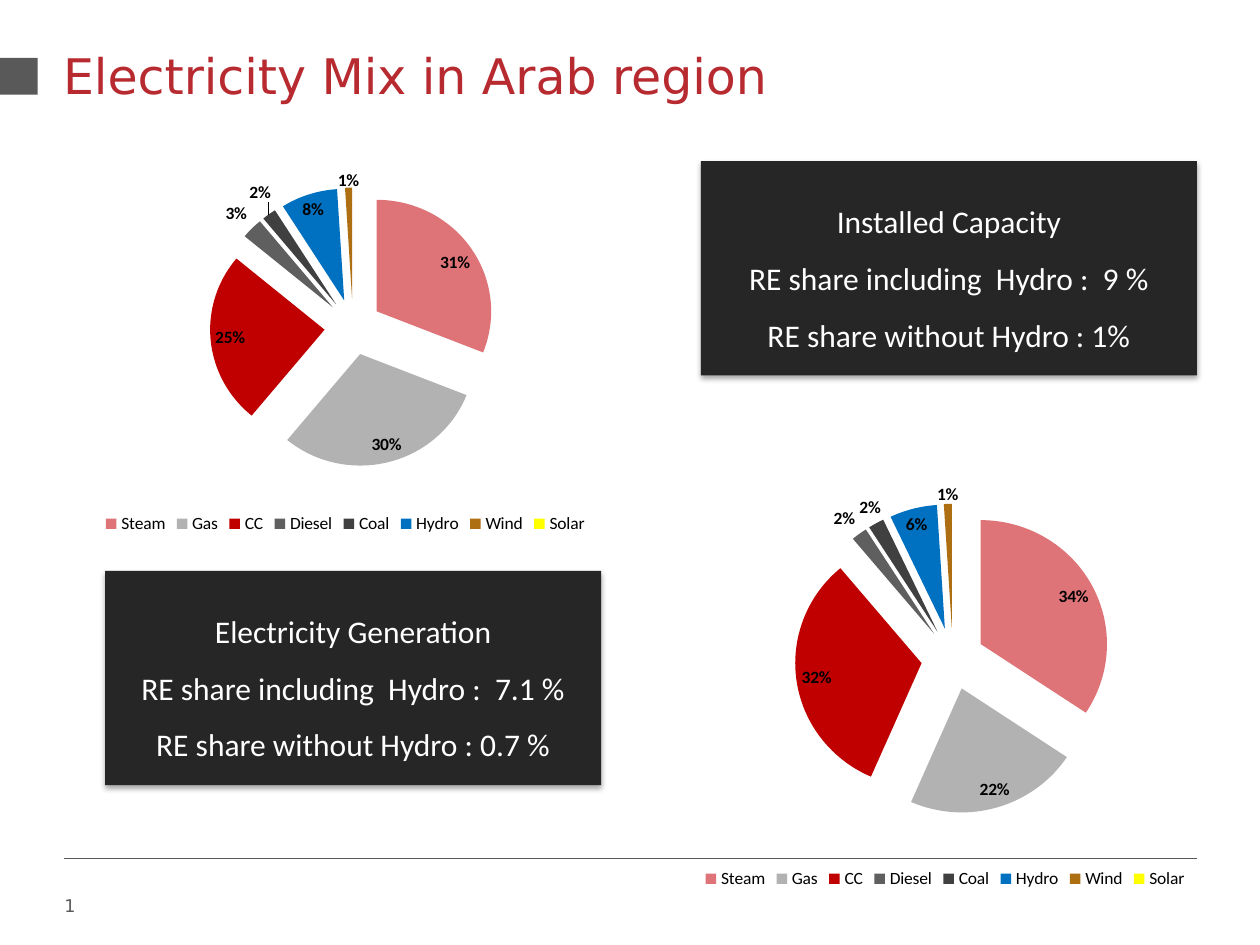
from lxml import etree
from pptx import Presentation
from pptx.chart.data import CategoryChartData
from pptx.dml.color import RGBColor
from pptx.enum.chart import XL_CHART_TYPE, XL_LABEL_POSITION, XL_LEGEND_POSITION
from pptx.enum.shapes import MSO_CONNECTOR, MSO_SHAPE
from pptx.enum.text import MSO_ANCHOR, PP_ALIGN
from pptx.oxml import parse_xml
from pptx.oxml.ns import nsdecls, qn
from pptx.util import Cm, Pt

RED = RGBColor(0xB7, 0x2A, 0x2F)
GREY = RGBColor(0x59, 0x59, 0x59)
DARK = RGBColor(0x26, 0x26, 0x26)
WHITE = RGBColor(0xFF, 0xFF, 0xFF)
BLACK = RGBColor(0, 0, 0)

TITLE = "Electricity Mix in Arab region"
SOURCES = [
    ("Steam", RGBColor(0xDF, 0x74, 0x78)),
    ("Gas", RGBColor(0xB2, 0xB2, 0xB2)),
    ("CC", RGBColor(0xC0, 0x00, 0x00)),
    ("Diesel", RGBColor(0x5F, 0x5F, 0x5F)),
    ("Coal", RGBColor(0x40, 0x40, 0x40)),
    ("Hydro", RGBColor(0x00, 0x70, 0xC0)),
    ("Wind", RGBColor(0xAE, 0x6E, 0x12)),
    ("Solar", RGBColor(0xFF, 0xFF, 0x00)),
]
# Shares of each source, then left, top, width, height in cm
PIES = [
    ((0.31, 0.30, 0.25, 0.03, 0.02, 0.08, 0.01, 0), (0.61, 3.25, 12.7, 7.6)),
    ((0.34, 0.22, 0.32, 0.02, 0.02, 0.06, 0.01, 0), (12.7, 9.62, 12.7, 8.39)),
]
# Lines of text, then left, top in cm
BOXES = [
    (("Installed Capacity", "RE share including  Hydro :  9 %",
      "RE share without Hydro : 1%"), (14.13, 3.25)),
    (("Electricity Generation", "RE share including  Hydro :  7.1 %",
      "RE share without Hydro : 0.7 %"), (2.12, 11.51)),
]
BOX_SIZE = (10, 4.32)
PLOT_AREA = {"x": 0.054, "y": 0.046, "w": 0.917, "h": 0.759}
EXPLOSION = 25

SHADOW = f"""<a:effectLst {nsdecls('a')}>
<a:outerShdw blurRad="{Pt(3.1)}" dist="{Pt(1.8)}" dir="5400000" rotWithShape="0">
<a:srgbClr val="000000"><a:alpha val="35000"/></a:srgbClr>
</a:outerShdw></a:effectLst>"""


def cm(*lengths):
    return [Cm(v) for v in lengths]


def style(font, name, size, color):
    font.name, font.size = name, Pt(size)
    font.color.rgb = color


def set_frame(tf):
    tf.word_wrap = True
    tf.vertical_anchor = MSO_ANCHOR.TOP
    tf.margin_left = tf.margin_right = 0


def add_rect(s, color, *box):
    sp = s.shapes.add_shape(MSO_SHAPE.RECTANGLE, *cm(*box))
    sp.shadow.inherit = False
    sp.fill.solid()
    sp.fill.fore_color.rgb = color
    sp.line.fill.background()
    return sp


def add_frame(s):
    """Title, red heading marker, footer rule and slide number."""
    add_rect(s, GREY, 0, 1.17, 0.76, 0.74)

    rule = s.shapes.add_connector(MSO_CONNECTOR.STRAIGHT, *cm(1.3, 17.31, 24.13, 17.31))
    rule.line.color.rgb = GREY
    rule.line.width = Pt(0.75)
    etree.SubElement(rule._element.spPr, qn("a:effectLst"))

    tf = s.shapes.add_textbox(*cm(1.3, 17.91, 5.92, 1.32)).text_frame
    set_frame(tf)
    tf.paragraphs[0]._p.append(parse_xml(
        f'<a:fld {nsdecls("a")} id="{{B6F15528-21DE-4FAA-801E-634DDDAF4B2B}}" type="slidenum">'
        f'<a:rPr lang="en-US" sz="1000"><a:solidFill><a:srgbClr val="{GREY}"/></a:solidFill>'
        '<a:latin typeface="DejaVu Sans"/></a:rPr><a:t>5</a:t></a:fld>'))

    title = s.shapes.title
    title.left, title.top, title.width, title.height = cm(1.27, 0.79, 22.86, 2.46)
    set_frame(title.text_frame)
    p = title.text_frame.paragraphs[0]
    p.alignment = PP_ALIGN.LEFT
    r = p.add_run()
    r.text = TITLE
    style(r.font, "DejaVu Sans", 28, RED)


def add_pie(s, shares, box):
    data = CategoryChartData(number_format="0%")
    data.categories = [name for name, _ in SOURCES]
    data.add_series("Series 1", shares)
    chart = s.shapes.add_chart(XL_CHART_TYPE.PIE, *cm(*box), data).chart
    chart.has_title = False
    style(chart.font, "Calibri", 10, BLACK)
    chart.has_legend = True
    chart.legend.position = XL_LEGEND_POSITION.BOTTOM
    chart.legend.include_in_layout = False

    area = chart._chartSpace.chart.plotArea
    for old in area.findall(qn("c:layout")):
        area.remove(old)
    sizes = "".join(f'<c:{k} val="{v}"/>' for k, v in PLOT_AREA.items())
    area.insert(0, parse_xml(
        f'<c:layout {nsdecls("c")}><c:manualLayout><c:layoutTarget val="inner"/>'
        f'<c:xMode val="edge"/><c:yMode val="edge"/>{sizes}</c:manualLayout></c:layout>'))

    plot = chart.plots[0]
    plot.vary_by_categories = True
    series = plot.series[0]
    series._element.find(qn("c:tx")).addnext(
        parse_xml(f'<c:explosion {nsdecls("c")} val="{EXPLOSION}"/>'))
    for i, (_, color) in enumerate(SOURCES):
        fill = series.points[i].format.fill
        fill.solid()
        fill.fore_color.rgb = color

    labels = series.data_labels
    labels.show_value = True
    labels.number_format = "0%"
    labels.number_format_is_linked = False
    labels.position = XL_LABEL_POSITION.BEST_FIT
    style(labels.font, "Calibri", 10, BLACK)
    labels.font.bold = True


def add_box(s, lines, corner):
    sp = add_rect(s, DARK, *corner, *BOX_SIZE)
    spPr = sp._element.spPr
    spPr.replace(spPr.find(qn("a:effectLst")), parse_xml(SHADOW))
    tf = sp.text_frame
    tf.word_wrap = True
    tf.vertical_anchor = MSO_ANCHOR.MIDDLE
    for i, line in enumerate(lines):
        p = tf.add_paragraph() if i else tf.paragraphs[0]
        p.alignment = PP_ALIGN.CENTER
        p.line_spacing = 1.5
        r = p.add_run()
        r.text = line
        style(r.font, "Calibri", 18, WHITE)


def main():
    prs = Presentation()
    prs.slide_width, prs.slide_height = cm(25.4, 19.05)
    s = prs.slides.add_slide(prs.slide_layouts[5])
    add_frame(s)
    for shares, box in PIES:
        add_pie(s, shares, box)
    for lines, corner in BOXES:
        add_box(s, lines, corner)
    prs.save("out.pptx")


if __name__ == "__main__":
    main()
